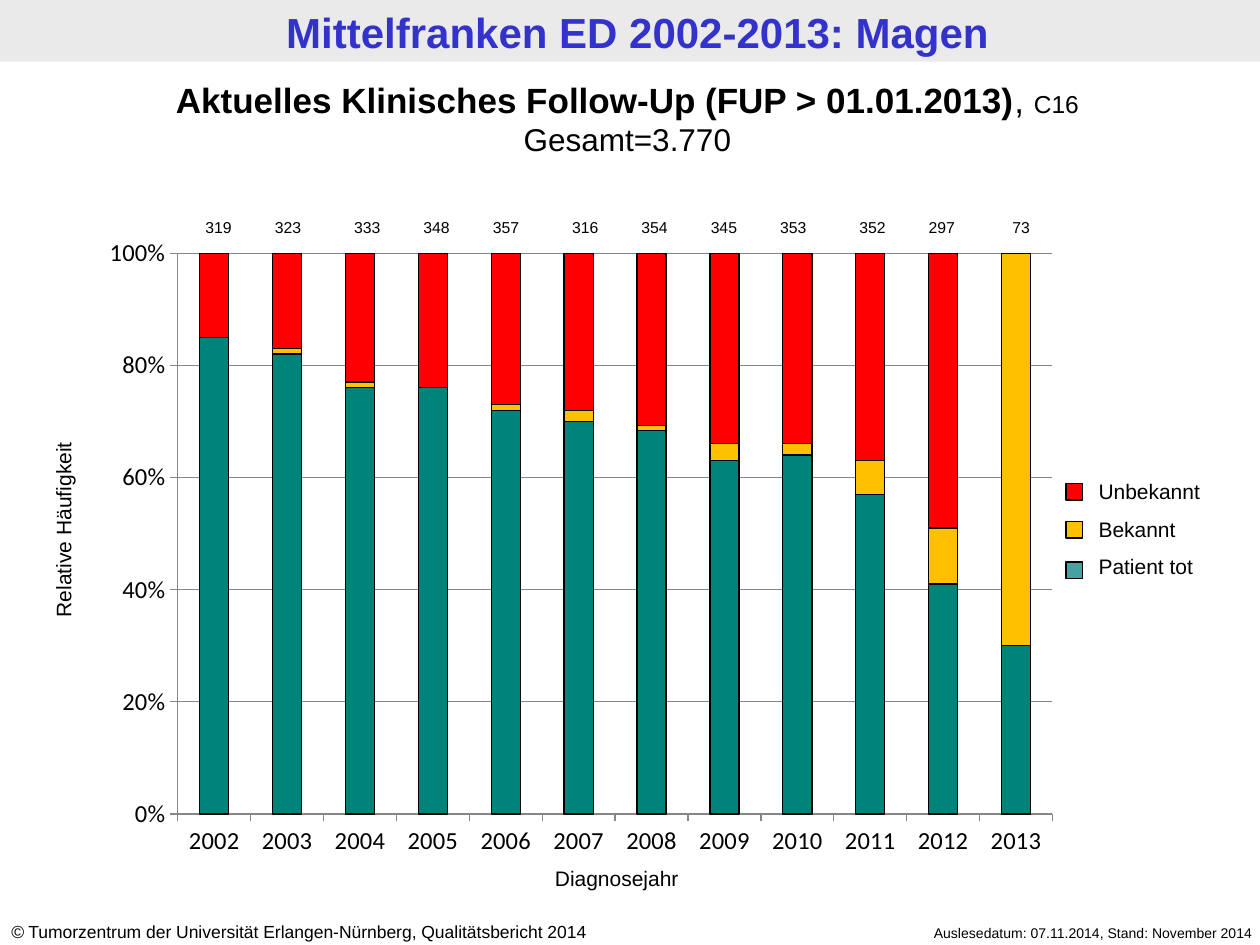
from lxml import etree
from pptx import Presentation
from pptx.chart.data import CategoryChartData
from pptx.dml.color import RGBColor
from pptx.enum import chart as ch, shapes, text
from pptx.oxml import parse_xml
from pptx.oxml.ns import nsdecls, qn
from pptx.util import Inches, Pt

THEME = {
    "font": "Arial", "axis_font": "Calibri",
    "ink": "000000", "title": "3333CC", "band": "EAEAEA", "grid": "878787",
    "dead": "008378", "key": "008380", "known": "FFC000", "unknown": "FF0000",
    "sizes": {"title": 24, "head": 20, "sub": 18, "code": 14, "axis": 14,
              "label": 12, "source": 10, "count": 9, "date": 8},
}
SIZE = THEME["sizes"]

# Content
TITLE = "Mittelfranken ED 2002-2013: Magen"
HEAD = [
    [("Aktuelles Klinisches Follow-Up (FUP > 01.01.2013)", "head", True),
     (", ", "head", False), ("C16", "code", False)],
    [("Gesamt=3.770", "sub", False)],
]
YEARS = [str(y) for y in range(2002, 2014)]
SERIES = [
    ("Patient tot", "dead", [85, 82, 76, 76, 72, 70, 69, 63, 64, 57, 41, 30]),
    ("Bekannt", "known", [0, 1, 1, 0, 1, 2, 1, 3, 2, 6, 10, 70]),
    ("Unbekannt", "unknown", [15, 17, 23, 24, 27, 28, 31, 34, 34, 37, 49, 0]),
]
# Cases per year and left edge of each label
COUNTS = [(319, 1.46), (323, 2.01), (333, 2.64), (348, 3.19), (357, 3.74),
          (316, 4.37), (354, 4.92), (345, 5.47), (353, 6.02), (352, 6.65),
          (297, 7.2), (73, 7.83)]
KEYS = [("unknown", 3.84), ("known", 4.14), ("key", 4.46)]
LEFT, MID, RIGHT = text.PP_ALIGN.LEFT, text.PP_ALIGN.CENTER, text.PP_ALIGN.RIGHT
LABELS = [
    ("Auslesedatum: 07.11.2014, Stand: November 2014",
     (6.65, 7.29, 3.39, 0.24), "date", RIGHT, 0),
    ("Relative Häufigkeit", (-0.7, 4.05, 2.41, 0.31), "label", MID, 270),
    ("Diagnosejahr", (3.77, 6.82, 2.25, 0.31), "label", MID, 0),
]


def rgb(name):
    return RGBColor.from_string(THEME[name])


def style(font, size, color="ink", bold=False, face="font"):
    font.name, font.size, font.bold = THEME[face], Pt(SIZE[size]), bold
    font.color.rgb = rgb(color)


def add_text(slide, box, paras, align=LEFT, turn=0, gap=0):
    """Each paragraph is a list of (text, size, bold) runs."""
    shape = slide.shapes.add_textbox(*map(Inches, box))
    shape.rotation = turn
    frame = shape.text_frame
    frame.word_wrap = True
    for i, runs in enumerate(paras):
        para = frame.add_paragraph() if i else frame.paragraphs[0]
        para.alignment = align
        if i and gap:
            para.space_before = Pt(gap)
        for words, size, bold in runs:
            run = para.add_run()
            run.text = words
            style(run.font, size, bold=bold)
    return shape


def add_rect(slide, box, color, edge=False):
    rect = slide.shapes.add_shape(shapes.MSO_SHAPE.RECTANGLE, *map(Inches, box))
    rect.shadow.inherit = False
    rect.fill.solid()
    rect.fill.fore_color.rgb = rgb(color)
    if edge:
        outline(rect.line, "ink")
    else:
        rect.line.fill.background()
    return rect


def outline(line, color):
    line.color.rgb = rgb(color)
    line.width = Pt(0.75)


def add_chart(slide):
    data = CategoryChartData()
    data.categories = YEARS
    for name, _, vals in SERIES:
        data.add_series(name, vals)
    chart = slide.shapes.add_chart(
        ch.XL_CHART_TYPE.COLUMN_STACKED_100,
        *map(Inches, (0.71, 1.79, 7.8, 5.11)), data).chart
    chart.has_legend = chart.has_title = False
    style(chart.font, "axis", face="axis_font")
    plot = chart.plots[0]
    plot.gap_width, plot.overlap, plot.vary_by_categories = 150, 100, False
    for series, (_, color, _) in zip(plot.series, SERIES):
        series.format.fill.solid()
        series.format.fill.fore_color.rgb = rgb(color)
        outline(series.format.line, "ink")
    # Axes
    for axis in (chart.category_axis, chart.value_axis):
        axis.major_tick_mark = ch.XL_TICK_MARK.OUTSIDE
        style(axis.tick_labels.font, "axis", face="axis_font")
        outline(axis.format.line, "grid")
    axis = chart.value_axis
    axis.minimum_scale, axis.maximum_scale, axis.major_unit = 0, 1, 0.2
    axis.tick_labels.number_format = "0%"
    axis.tick_labels.number_format_is_linked = False
    axis.has_major_gridlines = True
    outline(axis.major_gridlines.format.line, "grid")
    # Fixed inner plot area
    area = chart.element.find(".//" + qn("c:plotArea"))
    for old in area.findall(qn("c:layout")):
        area.remove(old)
    layout = parse_xml(f"<c:layout {nsdecls('c')}><c:manualLayout/></c:layout>")
    parts = [("layoutTarget", "inner"), ("xMode", "edge"), ("yMode", "edge"),
             ("x", 0.09), ("y", 0.043), ("w", 0.89), ("h", 0.871)]
    for tag, val in parts:
        etree.SubElement(layout[0], qn("c:" + tag), val=str(val))
    area.insert(0, layout)


def main():
    prs = Presentation()
    prs.slide_width, prs.slide_height = Inches(10), Inches(7.5)
    slide = prs.slides.add_slide(prs.slide_layouts[5])

    # Title on its band
    title = slide.shapes.title
    title.left, title.top, title.width, title.height = map(
        Inches, (0.06, 0.01, 10, 0.49))
    frame = title.text_frame
    frame.text = TITLE
    frame.vertical_anchor = text.MSO_ANCHOR.TOP
    frame.margin_top = frame.margin_bottom = Inches(0.04)
    frame.paragraphs[0].alignment = MID
    style(frame.paragraphs[0].runs[0].font, "title", "title", True)
    band = add_rect(slide, (0, 0, 10, 0.49), "band")
    title.element.addprevious(band.element)

    # Chart, heading and labels
    add_chart(slide)
    add_text(slide, (-0.04, 0.57, 10.04, 0.74), HEAD, MID)
    for words, box, size, align, turn in LABELS:
        add_text(slide, box, [[(words, size, False)]], align, turn)
    for count, left in COUNTS:
        add_text(slide, (left, 1.68, 0.55, 0.25),
                 [[(str(count), "count", False)]], MID)

    # Source line with slanted sign
    source = add_text(slide, (-0.01, 7.26, 5.24, 0.27), [[
        ("©", "source", False),
        (" Tumorzentrum der Universität Erlangen-Nürnberg, "
         "Qualitätsbericht 2014", "source", False)]])
    source.text_frame.paragraphs[0].runs[0].font.italic = True

    # Legend
    names = [[(name, "label", False)] for name, _, _ in reversed(SERIES)]
    add_text(slide, (8.62, 3.75, 1.42, 0.91), names, gap=7)
    for color, top in KEYS:
        key = add_rect(slide, (8.46, top, 0.13, 0.13), color, edge=True)
        if color == "key":
            tint = key.element.spPr.find(qn("a:solidFill"))[0]
            etree.SubElement(tint, qn("a:alpha"), val="74000")

    prs.save("out.pptx")


if __name__ == "__main__":
    main()
